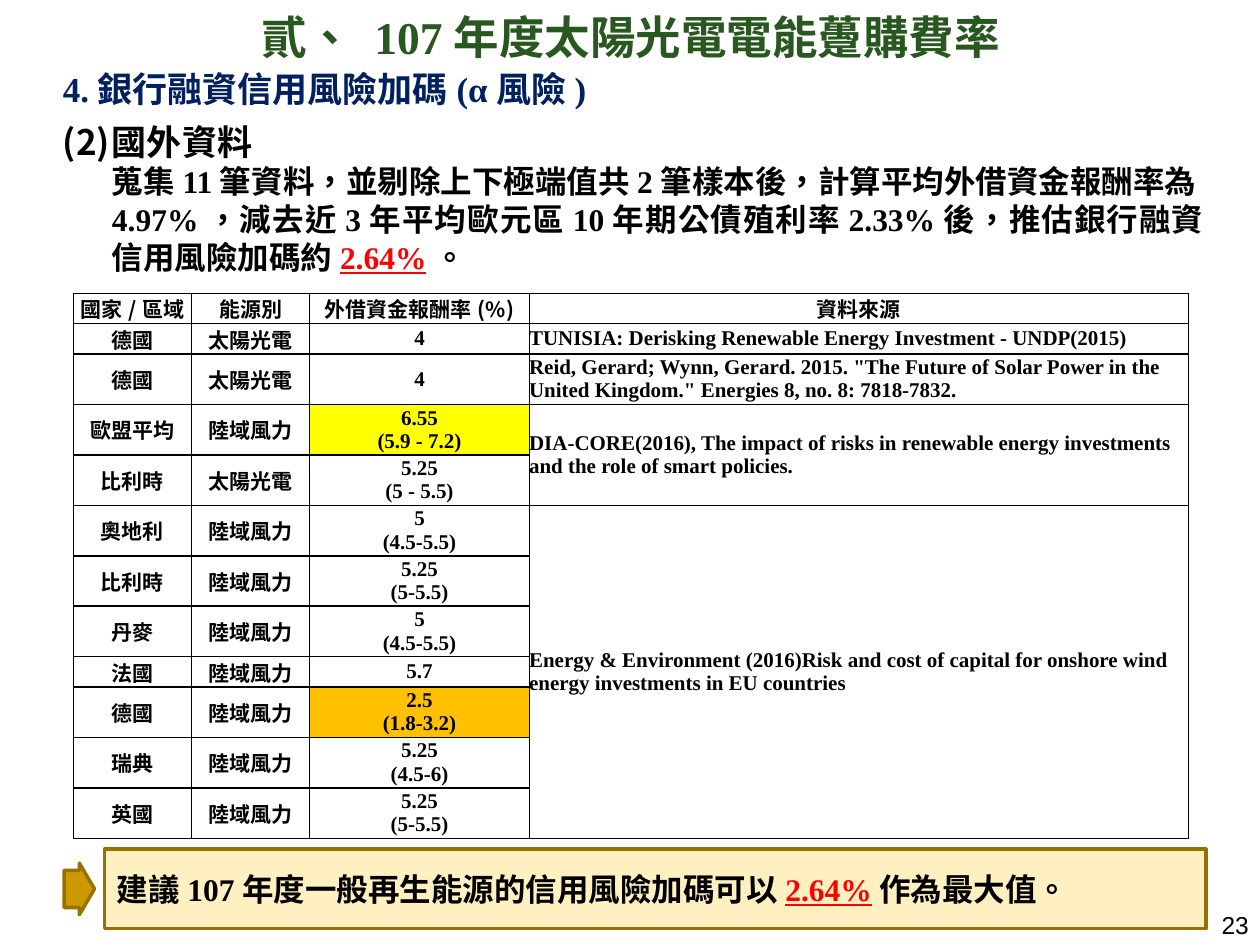
from dataclasses import dataclass

from lxml.etree import SubElement
from pptx import Presentation
from pptx.dml.color import RGBColor
from pptx.enum.lang import MSO_LANGUAGE_ID as Lang
from pptx.enum.shapes import MSO_SHAPE as Shape
from pptx.enum.text import MSO_ANCHOR as Anchor, PP_ALIGN as Align
from pptx.oxml.ns import qn
from pptx.util import Inches, Pt


@dataclass(frozen=True)
class Theme:
    serif: str = "Times New Roman"
    sans: str = "Arial"
    cjk: str = "Noto Sans CJK TC"
    ink: str = "000000"
    paper: str = "FFFFFF"
    title: str = "28571F"
    heading: str = "002060"
    accent: str = "FF0000"
    high: str = "FFFF00"
    low: str = "FFC000"
    banner: str = "FFF0C2"
    arrow: str = "CC9900"
    edge: str = "977100"
    title_size: float = 26
    heading_size: float = 20
    body_size: float = 18
    number_size: float = 14
    table_size: float = 12
    thin: float = 0.5
    thick: float = 1


class Deck:
    columns, rows = 100, 75

    def __init__(self, theme):
        self.theme = theme
        self.prs = Presentation()
        self.prs.slide_width, self.prs.slide_height = Inches(10), Inches(7.5)
        self.s = self.prs.slides.add_slide(self.prs.slide_layouts[5])

    def x(self, n):
        return round(self.prs.slide_width * n / self.columns)

    def y(self, n):
        return round(self.prs.slide_height * n / self.rows)

    def box(self, left, top, width, height):
        return self.x(left), self.y(top), self.x(width), self.y(height)

    def style(self, p, size, color=None, font=None, bold=True, align=Align.LEFT):
        p.alignment = align
        f = p.font
        f.size, f.bold, f.name = Pt(size), bold, font or self.theme.serif
        f.color.rgb = RGBColor.from_string(color or self.theme.ink)
        f.language_id = Lang.TRADITIONAL_CHINESE
        ea = SubElement(f._element, qn("a:ea"))
        ea.set("typeface", self.theme.cjk)

    def emphasize(self, p, before, key, after):
        for text in (before, key, after):
            r = p.add_run()
            r.text = text
            if text == key:
                r.font.underline = True
                r.font.color.rgb = RGBColor.from_string(self.theme.accent)

    def title(self, text, *area):
        sp = self.s.shapes.title
        sp.left, sp.top, sp.width, sp.height = self.box(*area)
        tf = sp.text_frame
        tf.text, tf.vertical_anchor = text, Anchor.MIDDLE
        self.style(tf.paragraphs[0], self.theme.title_size, self.theme.title,
                   align=Align.CENTER)

    def text_box(self, *area):
        tf = self.s.shapes.add_textbox(*self.box(*area)).text_frame
        tf.word_wrap = True
        return tf

    def indent(self, p, left, first=0):
        pPr = p._p.get_or_add_pPr()
        pPr.set("marL", str(self.x(left)))
        pPr.set("indent", str(self.x(first)))

    def number(self, p, start):
        pPr = p._p.get_or_add_pPr()
        bu = pPr.makeelement(qn("a:buAutoNum"),
                             {"type": "arabicParenBoth", "startAt": str(start)})
        pPr.find(qn("a:defRPr")).addprevious(bu)

    def body(self, heading, subheading, detail, *area):
        t = self.theme
        tf = self.text_box(*area)
        p = tf.paragraphs[0]
        p.text = heading
        self.style(p, t.heading_size, t.heading)
        p.line_spacing, p.space_after = Pt(1.2 * t.heading_size), Pt(6)
        self.indent(p, 2)
        p = tf.add_paragraph()
        p.text = subheading
        self.style(p, t.heading_size, font=t.cjk, align=Align.JUSTIFY)
        p.line_spacing = Pt(1.2 * t.heading_size)
        self.indent(p, 5.9, -3.9)
        self.number(p, 2)
        p = tf.add_paragraph()
        self.emphasize(p, *detail)
        self.style(p, t.body_size, align=Align.JUSTIFY)
        p.line_spacing = Pt(1.2 * t.body_size)
        self.indent(p, 5.9)

    def shape(self, kind, fill, *area):
        sp = self.s.shapes.add_shape(kind, *self.box(*area))
        sp.shadow.inherit = False
        sp.fill.solid()
        sp.fill.fore_color.rgb = RGBColor.from_string(fill)
        sp.line.color.rgb = RGBColor.from_string(self.theme.edge)
        sp.line.width = Pt(2)
        return sp

    def banner(self, parts, *area):
        tf = self.shape(Shape.FLOWCHART_PROCESS, self.theme.banner, *area).text_frame
        tf.word_wrap, tf.vertical_anchor = True, Anchor.MIDDLE
        self.emphasize(tf.paragraphs[0], *parts)
        self.style(tf.paragraphs[0], self.theme.body_size)

    def border(self, cell, top, bottom):
        tcPr = cell._tc.get_or_add_tcPr()
        thin = self.theme.thin
        sides = (("L", thin), ("R", thin), ("T", top), ("B", bottom))
        for i, (side, width) in enumerate(sides):
            ln = tcPr.makeelement(qn(f"a:ln{side}"), {"w": str(Pt(width))})
            fill = SubElement(ln, qn("a:solidFill"))
            SubElement(fill, qn("a:srgbClr")).set("val", self.theme.ink)
            tcPr.insert(i, ln)

    def cell(self, cell, text, fill, font, align):
        cell.margin_left = cell.margin_right = cell.margin_top = cell.margin_bottom = 0
        cell.vertical_anchor = Anchor.MIDDLE
        cell.fill.solid()
        cell.fill.fore_color.rgb = RGBColor.from_string(fill)
        cell.text = text
        for p in cell.text_frame.paragraphs:
            self.style(p, self.theme.table_size, font=font, align=align)

    def table(self, data, widths, blocks, merges, fills, left, top):
        t = self.theme
        heights = [3.7 if "\n" in r[2] or "\v" in r[2] or len(r[3]) > 100 else 2.4
                   for r in data]
        tbl = self.s.shapes.add_table(len(data), len(widths), *self.box(
            left, top, sum(widths), sum(heights))).table
        tbl.first_row = tbl.horz_banding = False
        for col, width in zip(tbl.columns, widths):
            col.width = self.x(width)
        rules = [t.thin if i in blocks else t.thick for i in range(len(data) + 1)]
        for i, values in enumerate(data):
            tbl.rows[i].height = self.y(heights[i])
            for j, text in enumerate(values):
                align = Align.LEFT if i and j == 3 else Align.CENTER
                self.cell(tbl.cell(i, j), text, fills.get((i, j), t.paper),
                          t.serif if i else t.cjk, align)
                self.border(tbl.cell(i, j), rules[i], rules[i + 1])
        for first, last in merges:
            tbl.cell(first, 3).merge(tbl.cell(last, 3))

    def page_number(self, text, *area):
        p = self.text_box(*area).paragraphs[0]
        p.text = text
        self.style(p, self.theme.number_size, font=self.theme.sans, bold=False,
                   align=Align.RIGHT)


SOLAR, WIND = "太陽光電", "陸域風力"
RATES = [
    ("國家/區域", "能源別", "外借資金報酬率(%)", "資料來源"),
    ("德國", SOLAR, "4", "TUNISIA: Derisking Renewable Energy Investment - UNDP(2015)"),
    ("德國", SOLAR, "4", 'Reid, Gerard; Wynn, Gerard. 2015. "The Future of Solar Power in '
     'the United Kingdom." Energies 8, no. 8: 7818-7832.'),
    ("歐盟平均", WIND, "6.55\n(5.9 - 7.2)", "DIA-CORE(2016), The impact of risks in "
     "renewable energy investments and the role of smart policies."),
    ("比利時", SOLAR, "5.25\n(5 - 5.5)", ""),
    ("奧地利", WIND, "5\v(4.5-5.5)", "Energy & Environment (2016)Risk and cost of "
     "capital for onshore wind energy investments in EU countries"),
    ("比利時", WIND, "5.25\v(5-5.5)", ""),
    ("丹麥", WIND, "5\v(4.5-5.5)", ""),
    ("法國", WIND, "5.7", ""),
    ("德國", WIND, "2.5\v(1.8-3.2)", ""),
    ("瑞典", WIND, "5.25\v(4.5-6)", ""),
    ("英國", WIND, "5.25\v(5-5.5)", ""),
]


def main():
    theme = Theme()
    deck = Deck(theme)
    deck.title("貳、 107年度太陽光電電能躉購費率", 5.2, -0.3, 89.8, 6.3)
    deck.body("4.銀行融資信用風險加碼(α風險)", "國外資料",
              ("蒐集11筆資料，並剔除上下極端值共2筆樣本後，計算平均外借資金報酬率為4.97%，"
               "減去近3年平均歐元區10年期公債殖利率2.33%後，推估銀行融資信用風險加碼約",
               "2.64%", "。"), 2, 4.9, 94.5, 17.3)
    deck.table(RATES, (9.4, 9.4, 17.4, 52.3), {0, 1, 3, 5, 12}, ((3, 4), (5, 11)),
               {(3, 2): theme.high, (9, 2): theme.low}, 5.8, 23.3)
    deck.banner(("建議107年度一般再生能源的信用風險加碼可以", "2.64%", "作為最大值。"),
                8.3, 67.4, 87.4, 6.3)
    arrow = deck.shape(Shape.RIGHT_ARROW, theme.arrow, 5.1, 68.5, 2.4, 4.1)
    arrow.adjustments[0], arrow.adjustments[1] = 0.72, 0.5
    deck.page_number("23", 76.8, 71.7, 23.3, 5.2)
    deck.prs.save("out.pptx")


if __name__ == "__main__":
    main()
